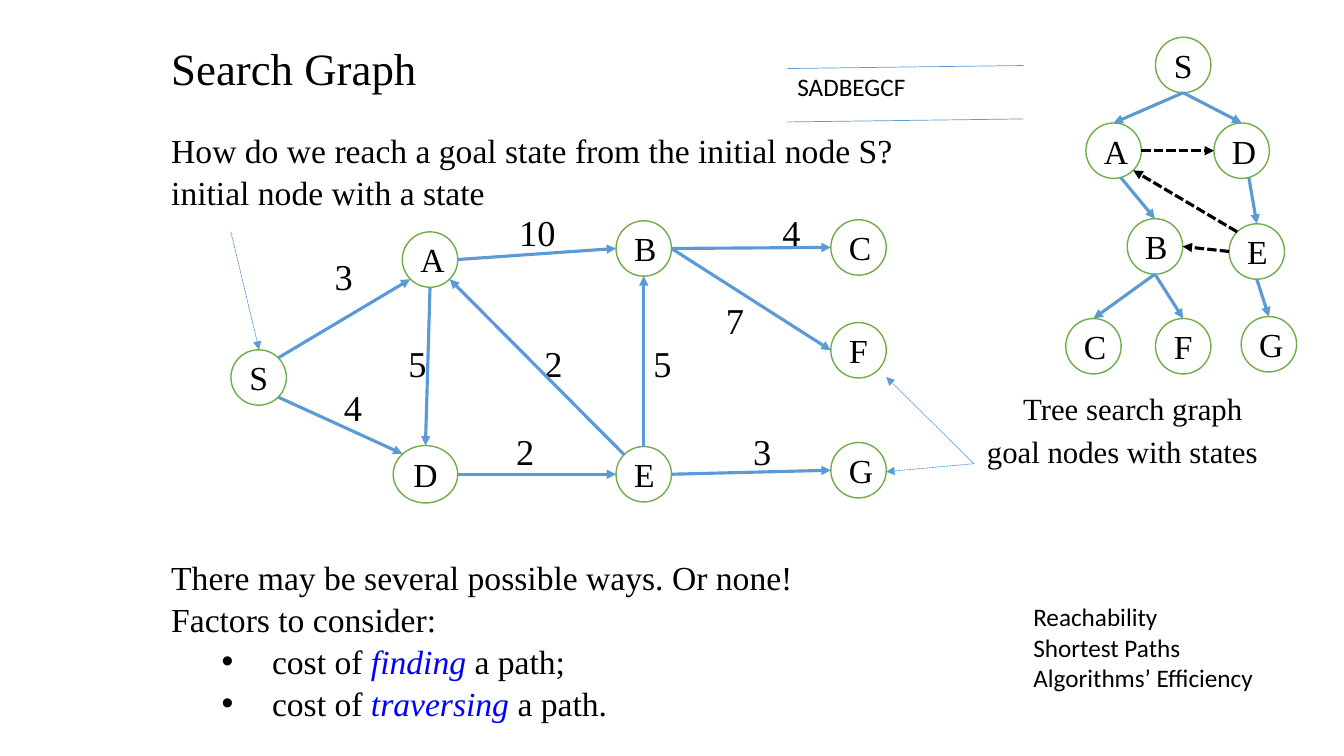
from lxml.etree import SubElement
from pptx import Presentation
from pptx.dml.color import RGBColor
from pptx.enum.dml import MSO_LINE
from pptx.enum.shapes import MSO_CONNECTOR, MSO_SHAPE
from pptx.enum.text import MSO_ANCHOR, PP_ALIGN
from pptx.oxml.ns import qn
from pptx.util import Inches, Pt

COLORS = {"ink": "000000", "paper": "FFFFFF", "ring": "70AD47",
          "edge": "5B9BD5", "key": "0000FF"}
SERIF, SANS = "Times New Roman", "Calibri"
SIZE = 0.55  # usual node diameter

# Points on a node's rim, as parts of its radius
RIM = {"n": (0, -1), "ne": (0.71, -0.71), "e": (1, 0), "se": (0.71, 0.71),
       "sse": (0.26, 0.97), "s": (0, 1), "sw": (-0.71, 0.71), "w": (-1, 0),
       "nw": (-0.71, -0.71)}


def color(name):
    return RGBColor.from_string(COLORS[name])


def style(run, size, face=SERIF, ink="ink"):
    run.font.size = Pt(size)
    run.font.name = face
    run.font.color.rgb = color(ink)


def write(slide, box, lines, size, face=SERIF, align=PP_ALIGN.LEFT,
          anchor=MSO_ANCHOR.TOP, wrap=True, pitch=None):
    frame = slide.shapes.add_textbox(*map(Inches, box)).text_frame
    frame.word_wrap = wrap
    frame.vertical_anchor = anchor
    frame.text = "\n".join(lines)
    for para in frame.paragraphs:
        para.alignment = align
        if pitch:
            para.line_spacing = pitch
        for run in para.runs:
            style(run, size, face)
    return frame


def label(slide, x, y, text):
    write(slide, (x - 0.35, y - 0.25, 0.7, 0.5), [text], 26,
          align=PP_ALIGN.CENTER, anchor=MSO_ANCHOR.MIDDLE)


def link(slide, start, end, ink="edge", width=2.25, dash=False, head=True):
    line = slide.shapes.add_connector(
        MSO_CONNECTOR.STRAIGHT, *map(Inches, (*start, *end)))
    line.line.color.rgb = color(ink)
    line.line.width = Pt(width)
    if dash:
        line.line.dash_style = MSO_LINE.SQUARE_DOT
    if head:
        SubElement(line.line._get_or_add_ln(), qn("a:tailEnd"), type="triangle")
    SubElement(line._element.spPr, qn("a:effectLst"))


def node(slide, name, box):
    ring = slide.shapes.add_shape(MSO_SHAPE.OVAL, *map(Inches, box))
    ring.shadow.inherit = False
    ring.fill.solid()
    ring.fill.fore_color.rgb = color("paper")
    ring.line.color.rgb = color("ring")
    ring.line.width = Pt(1)
    frame = ring.text_frame
    frame.word_wrap = True
    frame.vertical_anchor = MSO_ANCHOR.MIDDLE
    frame.text = name
    frame.paragraphs[0].alignment = PP_ALIGN.CENTER
    style(frame.paragraphs[0].runs[0], 24)


def network(slide, left, top, nodes, edges):
    """Nodes are name: (x, y[, w, h]); edges are "A.e B.w" pairs of rim points."""
    boxes = {}
    for name, (x, y, *dims) in nodes.items():
        boxes[name] = (left + x, top + y, *(dims or (SIZE, SIZE)))
        node(slide, name, boxes[name])

    def rim(spot):
        name, side = spot.split(".")
        x, y, w, h = boxes[name]
        dx, dy = RIM[side]
        return x + w / 2 * (1 + dx), y + h / 2 * (1 + dy)

    for edge, look in edges.items():
        link(slide, *map(rim, edge.split()), **look)


def graph(slide, left, top):
    # Edge costs
    for x, y, cost in [(3.04, 0.12, "10"), (5.56, 0.12, "4"), (1.12, 0.56, "3"),
                       (5, 0.99, "7"), (1.85, 1.42, "5"), (3.2, 1.42, "2"),
                       (4.28, 1.42, "5"), (1.21, 1.86, "4"), (2.92, 2.29, "2"),
                       (5.27, 2.29, "3")]:
        label(slide, left + x, top + y, cost)
    # Nodes and edges
    nodes = {"S": (0, 1.29), "A": (1.7, 0.12), "D": (1.61, 2.24, 0.64, 0.57),
             "E": (3.82, 2.25), "B": (3.82, 0.01), "C": (5.95, 0),
             "F": (5.95, 1.02), "G": (5.95, 2.21)}
    edges = ["S.ne A.sw", "S.se D.nw", "A.e B.w", "D.e E.w", "E.e G.w",
             "A.s D.n", "E.n B.s", "E.nw A.se", "B.e C.w", "B.e F.w"]
    network(slide, left, top, nodes, {edge: {} for edge in edges})
    # Pointers from the captions
    for start, end in [((7.37, 2.42), (6.5, 1.56)), ((7.37, 2.42), (6.5, 2.5)),
                       ((0, 0.12), (0.28, 1.29))]:
        link(slide, (left + start[0], top + start[1]),
             (left + end[0], top + end[1]), width=0.5, dash=True)
    write(slide, (left + 7.4, top + 2.06, 3, 0.46), ["goal nodes with states"], 22)


def tree(slide, left, top):
    nodes = {"S": (0.89, 0), "A": (0.2, 0.85), "D": (1.47, 0.85),
             "B": (0.61, 1.8), "E": (1.62, 1.85), "C": (0, 2.79),
             "F": (0.89, 2.79), "G": (1.74, 2.77)}
    down = ["S.s A.n", "S.s D.n", "A.sse B.n", "B.s F.n", "B.s C.n",
            "D.sse E.n", "E.s G.n"]
    cross = ["A.e D.w", "E.nw A.se", "E.w B.e"]
    looks = {edge: {} for edge in down}
    looks |= {edge: {"ink": "ink", "dash": True} for edge in cross}
    network(slide, left, top, nodes, looks)
    write(slide, (left - 0.52, top + 3.45, 2.6, 0.46), ["Tree search graph"], 22)


def visits(slide, left, top):
    for y in (0.03, 0.56):
        link(slide, (left, top + y), (left + 2.34, top + y - 0.03),
             width=0.5, head=False)
    write(slide, (left, top + 0.01, 2.34, 0.4), ["SADBEGCF"], 18, SANS)


def factors(slide, left, top):
    frame = write(slide, (left, top, 8, 1.75),
                  ["There may be several possible ways. Or none!",
                   "Factors to consider:"], 24, pitch=1.04)
    for word in ("finding", "traversing"):
        para = frame.add_paragraph()
        para.line_spacing = 1.04
        props = para._p.get_or_add_pPr()
        props.set("marL", str(Inches(1)))
        props.set("indent", str(Inches(-0.5)))
        SubElement(props, qn("a:buFont"), typeface="Arial")
        SubElement(props, qn("a:buChar"), char="•")
        for text in ("cost of ", word + " ", "a path" + ";."[word != "finding"]):
            run = para.add_run()
            run.text = text
            style(run, 24)
            if text.strip() == word:
                run.font.italic = True
                run.font.color.rgb = color("key")


def main():
    deck = Presentation()
    deck.slide_width, deck.slide_height = Inches(13.33), Inches(7.5)
    slide = deck.slides.add_slide(deck.slide_layouts[6])
    # Heading and question
    write(slide, (1.6, 0.36, 2.66, 0.64), ["Search Graph"], 32, wrap=False)
    write(slide, (1.6, 1.22, 8, 0.9),
          ["How do we reach a goal state from the initial node S?",
           "initial node with a state"], 24, pitch=1.04)
    # Diagrams
    graph(slide, 2.29, 2.18)
    tree(slide, 10.57, 0.37)
    visits(slide, 7.81, 0.65)
    # Closing notes
    factors(slide, 1.6, 5.46)
    write(slide, (10.15, 5.92, 2.44, 1.01),
          ["Reachability", "Shortest Paths", "Algorithms’ Efficiency"], 18, SANS)
    deck.save("out.pptx")


if __name__ == "__main__":
    main()
